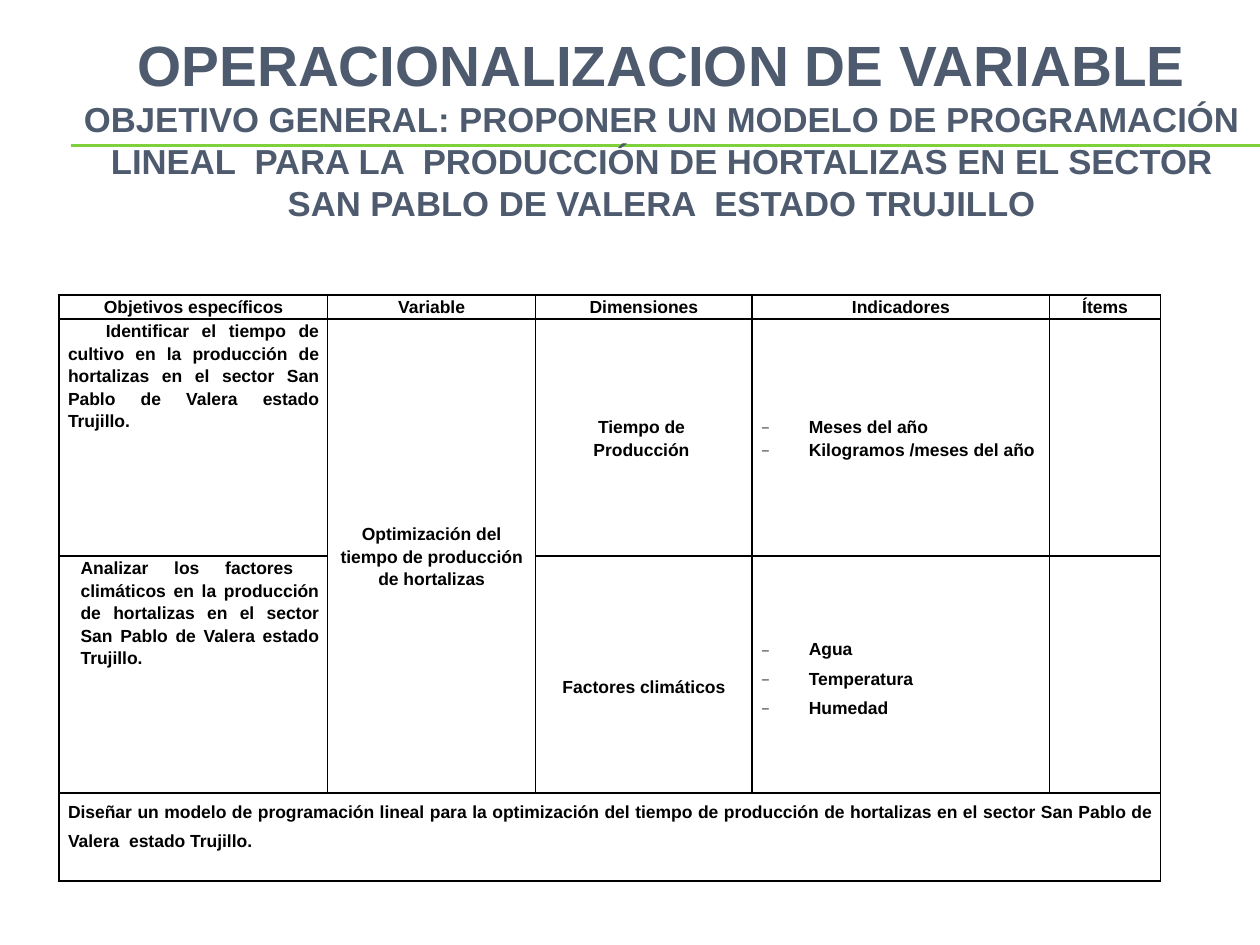
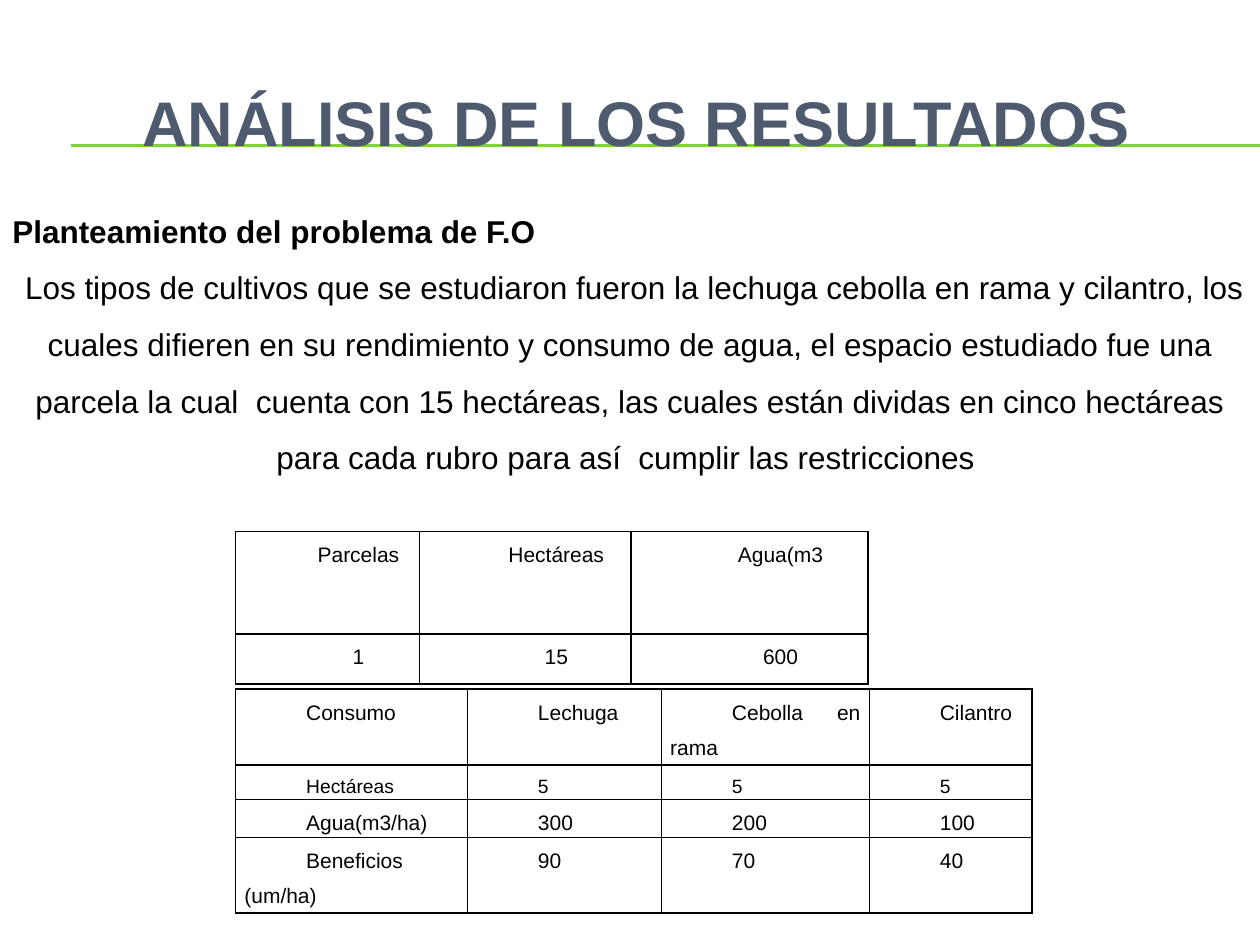
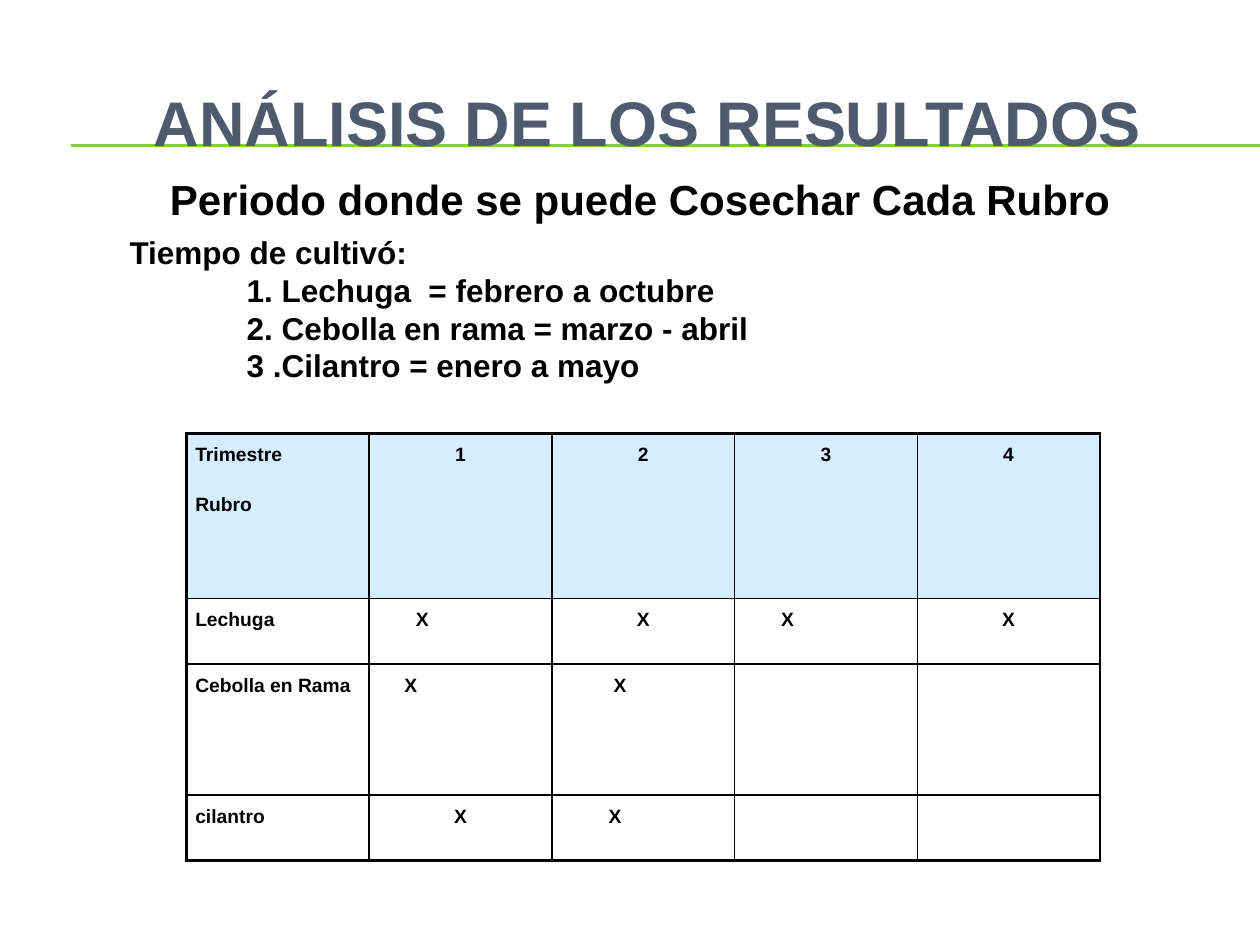
from dataclasses import dataclass, replace

from lxml import etree
from pptx import Presentation
from pptx import util as u
from pptx.dml.color import RGBColor
from pptx.enum import shapes, text
from pptx.oxml import ns

Inches, Pt = u.Inches, u.Pt
COLORS = {"title": "4E5B6F", "body": "000000", "rule": "7FD13B", "header": "D6ECFF"}
FONT = "Arial"
LEFT, CENTER, JUSTIFY = text.PP_ALIGN.LEFT, text.PP_ALIGN.CENTER, text.PP_ALIGN.JUSTIFY
MIDDLE, TOP = text.MSO_ANCHOR.MIDDLE, text.MSO_ANCHOR.TOP


@dataclass(frozen=True)
class Run:
    text: str
    size: float
    bold: bool = True
    color: str = "body"
    font: str = FONT


@dataclass(frozen=True)
class Style:
    size: float = 10
    bold: bool = True
    align: int = LEFT
    margin: float = 0
    indent: float = 0
    spacing: float = 1
    after: float = 0
    bullet: str = ""


@dataclass(frozen=True)
class Cell:
    lines: tuple = ()
    style: Style = Style()
    anchor: int = TOP
    fill: str = ""
    top: float = 0


@dataclass(frozen=True)
class Grid:
    left: float
    top: float
    columns: list
    rows: list
    outer: float = 1


def rgb(name: str) -> RGBColor:
    return RGBColor.from_string(COLORS[name])


def write(paragraph, runs: list, style: Style) -> None:
    paragraph.alignment = style.align
    paragraph.line_spacing = style.spacing
    paragraph.space_after = Pt(style.after)
    properties = paragraph._p.get_or_add_pPr()
    properties.set("marL", str(Inches(style.margin)))
    properties.set("indent", str(Inches(style.indent)))
    if style.bullet:
        etree.SubElement(properties, ns.qn("a:buChar")).set("char", style.bullet)
    for item in runs:
        run = paragraph.add_run()
        run.text = item.text
        run.font.name = item.font
        run.font.size = Pt(item.size)
        run.font.bold = item.bold
        run.font.color.rgb = rgb(item.color)


def write_all(frame, paragraphs: list) -> None:
    for index, (runs, style) in enumerate(paragraphs):
        paragraph = frame.add_paragraph() if index else frame.paragraphs[0]
        write(paragraph, runs, style)


def add_text(slide, box: tuple, paragraphs: list, anchor: int = TOP) -> None:
    frame = slide.shapes.add_textbox(*map(Inches, box)).text_frame
    frame.word_wrap = True
    frame.vertical_anchor = anchor
    write_all(frame, paragraphs)


def add_rule(slide, top: float) -> None:
    line = slide.shapes.add_connector(
        shapes.MSO_CONNECTOR.STRAIGHT, Inches(0.56), Inches(top), Inches(10), Inches(top))
    line.line.color.rgb = rgb("rule")
    line.line.width = Pt(0.75)
    etree.SubElement(line._element.spPr, ns.qn("a:effectLst"))


def add_slide(presentation, title_box: tuple, title: list, style: Style):
    slide = presentation.slides.add_slide(presentation.slide_layouts[6])
    for top in (1.15, 1.16):
        add_rule(slide, top)
    add_text(slide, title_box, [(title, style)], MIDDLE)
    return slide


def add_border(cell, side: str, width: float) -> None:
    line = etree.SubElement(cell._tc.get_or_add_tcPr(), ns.qn(f"a:ln{side}"))
    line.set("w", str(Pt(width)))
    fill = etree.SubElement(line, ns.qn("a:solidFill"))
    etree.SubElement(fill, ns.qn("a:srgbClr")).set("val", COLORS["body"])


def fill_cell(cell, content: Cell) -> None:
    cell.margin_left = cell.margin_right = Inches(0.07)
    cell.margin_top, cell.margin_bottom = Inches(content.top), 0
    cell.vertical_anchor = content.anchor
    if content.fill:
        cell.fill.solid()
        cell.fill.fore_color.rgb = rgb(content.fill)
    else:
        cell.fill.background()
    style = content.style
    write_all(cell.text_frame,
              [([Run(line, style.size, style.bold)], style) for line in content.lines])


def add_grid(slide, grid: Grid, contents: list, merges: tuple = ()) -> None:
    row_count, column_count = len(grid.rows), len(grid.columns)
    table = slide.shapes.add_table(
        row_count, column_count, Inches(grid.left), Inches(grid.top),
        Inches(sum(grid.columns)), Inches(sum(grid.rows))).table
    table.first_row = table.horz_banding = False
    for column, width in zip(table.columns, grid.columns):
        column.width = Inches(width)
    for row, height in zip(table.rows, grid.rows):
        row.height = Inches(height)
    for row, row_contents in enumerate(contents):
        for column, content in enumerate(row_contents):
            cell = table.cell(row, column)
            edges = {"L": column == 0, "R": column == column_count - 1,
                     "T": row == 0, "B": row == row_count - 1}
            for side, is_outer in edges.items():
                add_border(cell, side, grid.outer if is_outer else 1)
            fill_cell(cell, content)
    for start, end in merges:
        table.cell(*start).merge(table.cell(*end))


def build_variables(presentation) -> None:
    title = [
        Run("OPERACIONALIZACION DE VARIABLE ", 32.4, color="title"),
        Run("OBJETIVO GENERAL: PROPONER UN MODELO DE PROGRAMACIÓN LINEAL  PARA LA  "
            "PRODUCCIÓN DE HORTALIZAS EN EL SECTOR SAN PABLO DE VALERA  ESTADO TRUJILLO",
            19.8, color="title"),
    ]
    slide = add_slide(presentation, (0.5, 0.31, 9.5, 1.39), title, Style(align=CENTER))
    centered = Style(align=CENTER, spacing=1.15)
    justified = replace(centered, align=JUSTIFY)
    bulleted = Style(margin=0.38, indent=-0.38, spacing=1.15, bullet="₋")
    empty = Cell()
    headers = ("Objetivos específicos", "Variable", "Dimensiones", "Indicadores", "Ítems")
    contents = [
        [Cell((header,), centered) for header in headers],
        [Cell(("Identificar el tiempo de cultivo en la producción de hortalizas en el "
               "sector San Pablo de Valera estado Trujillo.",), replace(justified, indent=0.3)),
         Cell(("Optimización del tiempo de producción de hortalizas",), centered, MIDDLE),
         Cell(("Tiempo de ", "Producción "), centered, MIDDLE),
         Cell(("Meses del año", "Kilogramos /meses del año"), bulleted, MIDDLE),
         empty],
        [Cell(("Analizar los factores  climáticos en la producción de hortalizas en el "
               "sector San Pablo de Valera estado Trujillo.",), replace(justified, margin=0.1)),
         empty,
         Cell(("Factores climáticos",), centered, MIDDLE, top=0.18),
         Cell(("Agua", "Temperatura", "Humedad"), replace(bulleted, spacing=1.5), MIDDLE),
         empty],
        [Cell(("Diseñar un modelo de programación lineal para la optimización del tiempo "
               "de producción de hortalizas en el sector San Pablo de Valera  estado "
               "Trujillo.",), replace(justified, spacing=1.5))] + [empty] * 4,
    ]
    grid = Grid(0.47, 2.34, [2.13, 1.65, 1.72, 2.36, 0.88], [0.18, 1.88, 1.88, 0.7])
    add_grid(slide, grid, contents, (((1, 1), (2, 1)), ((3, 0), (3, 4))))


RESULTS_BOX = (0.33, 0.5, 9.5, 0.92)
RESULTS_TITLE = Run("ANÁLISIS DE LOS RESULTADOS", 36, color="title")


def build_problem(presentation) -> None:
    slide = add_slide(presentation, RESULTS_BOX, [RESULTS_TITLE], Style(margin=0.7))
    add_text(slide, (0, 1.48, 10, 4.04), [
        ([Run("Planteamiento del problema de F.O", 18)], Style(spacing=1.5)),
        ([Run(" ", 18),
          Run("Los tipos de cultivos que se estudiaron fueron la lechuga cebolla en rama y "
              "cilantro, los cuales difieren en su rendimiento y consumo de agua, el espacio "
              "estudiado fue una parcela la cual  cuenta con 15 hectáreas, las cuales están "
              "dividas en cinco hectáreas para cada rubro para así  cumplir las "
              "restricciones ", 18, bold=False)], Style(align=CENTER, spacing=1.5)),
    ])
    centered = Style(12, False, CENTER, indent=0.49, spacing=1.5)
    plots = [("Parcelas", "Hectáreas", "Agua(m3"), ("1", "15", "600")]
    add_grid(slide, Grid(1.87, 4.22, [1.46, 1.68, 1.88], [0.81, 0.4]),
             [[Cell((value,), centered) for value in row] for row in plots])
    justified = replace(centered, align=JUSTIFY)
    usage = [
        (12, ("Consumo", "Lechuga ", "Cebolla en rama ", "Cilantro")),
        (11, ("Hectáreas ", "5", "5", "5")),
        (12, ("Agua(m3/ha)", "300", "200", "100")),
        (12, ("Beneficios (um/ha)", "90", "70", "40")),
    ]
    add_grid(slide, Grid(1.87, 5.47, [1.84, 1.54, 1.65, 1.29], [0.6, 0.27, 0.3, 0.6]),
             [[Cell((value,), replace(justified, size=size)) for value in row]
              for size, row in usage])


def build_harvest(presentation) -> None:
    title = [Run(" ", 36, False, "title", "Roboto"), RESULTS_TITLE]
    slide = add_slide(presentation, RESULTS_BOX, title, Style(align=CENTER))
    add_text(slide, (1.25, 1.33, 7.73, 1.31),
             [([Run("Periodo donde se puede Cosechar Cada Rubro", 24)], Style())])
    justified = Style(11, align=JUSTIFY, spacing=1.5, after=10)
    centered = replace(justified, align=CENTER)
    empty = Cell()

    def name(crop: str) -> Cell:
        return Cell((crop,), justified)

    def mark(indent: float) -> Cell:
        return Cell(("X",), replace(justified, indent=indent))

    centered_mark = Cell(("X",), centered)
    contents = [
        [Cell(("Trimestre", "Rubro"), justified, fill="header")]
        + [Cell((str(quarter),), centered, fill="header") for quarter in range(1, 5)],
        [name("Lechuga"), mark(0.3), centered_mark, mark(0.3), centered_mark],
        [name("Cebolla en Rama"), mark(0.21), mark(0.42), empty, empty],
        [name("cilantro"), centered_mark, mark(0.38), empty, empty],
    ]
    add_grid(slide, Grid(1.48, 3.44, [1.45] * 5, [1.31, 0.52, 1.04, 0.52], 1.5), contents)
    periods = ("1. Lechuga  = febrero a octubre", "2. Cebolla en rama = marzo - abril",
               "3 .Cilantro = enero a mayo")
    add_text(slide, (0.86, 1.8, 8.2, 1.62),
             [([Run("Tiempo de cultivó:", 18)], Style(margin=0.07))]
             + [([Run(period, 18)], Style(margin=1)) for period in periods])


def main() -> None:
    presentation = Presentation()
    presentation.slide_width, presentation.slide_height = Inches(10), Inches(7.5)
    build_variables(presentation)
    build_problem(presentation)
    build_harvest(presentation)
    presentation.save("out.pptx")


if __name__ == "__main__":
    main()
